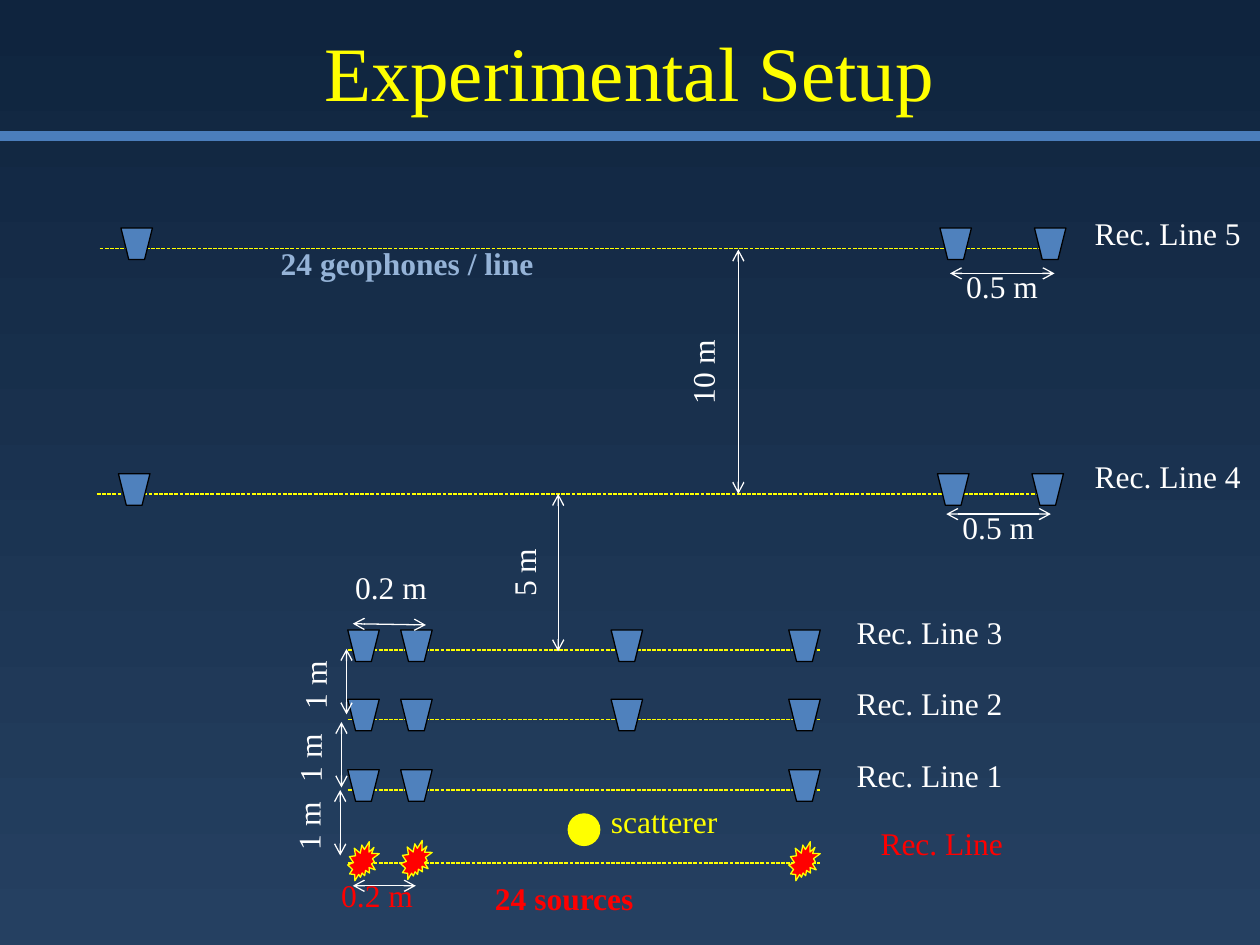
from lxml.etree import SubElement
from pptx import Presentation
from pptx.dml.color import RGBColor
from pptx.enum.dml import MSO_LINE
from pptx.enum.shapes import MSO_CONNECTOR, MSO_SHAPE
from pptx.enum.text import MSO_ANCHOR, MSO_AUTO_SIZE, PP_ALIGN
from pptx.oxml.ns import qn
from pptx.util import Inches, Pt

NAVY = RGBColor(0x0F, 0x24, 0x3E)
STEEL = RGBColor(0x25, 0x40, 0x61)
BAND = RGBColor(0x4B, 0x7E, 0xBC)
BLUE = RGBColor(0x4F, 0x81, 0xBD)
PALE = RGBColor(0x95, 0xB3, 0xD7)
YELLOW = RGBColor(0xFF, 0xFF, 0x00)
WHITE = RGBColor(0xFF, 0xFF, 0xFF)
RED = RGBColor(0xFF, 0x00, 0x00)
BLACK = RGBColor(0x00, 0x00, 0x00)


class Board:
    font = "Times New Roman"
    size = 18
    thin = 0.75
    side = 0.25
    high = 0.4

    def __init__(self, slide):
        self.slide = slide
        self.shapes = slide.shapes

    def ground(self, top, base):
        fill = self.slide.background.fill
        fill.gradient()
        fill.gradient_angle = 270
        for stop, color in zip(fill.gradient_stops, (top, base)):
            stop.color.rgb = color

    def line(self, x1, y1, x2, y2, color, width=thin):
        line = self.shapes.add_connector(
            MSO_CONNECTOR.STRAIGHT, Inches(x1), Inches(y1), Inches(x2), Inches(y2))
        line.line.color.rgb = color
        line.line.width = Pt(width)
        SubElement(line._element.spPr, qn("a:effectLst"))
        return line

    def dash(self, x1, x2, y):
        self.line(x1, y, x2, y, YELLOW).line.dash_style = MSO_LINE.SQUARE_DOT

    def span(self, x1, y1, x2, y2):
        stroke = self.line(x1, y1, x2, y2, WHITE).line._get_or_add_ln()
        for end in ("a:headEnd", "a:tailEnd"):
            SubElement(stroke, qn(end)).set("type", "arrow")

    def paint(self, shape, fill, edge):
        shape.shadow.inherit = False
        shape.fill.solid()
        shape.fill.fore_color.rgb = fill
        shape.line.color.rgb = edge
        shape.line.width = Pt(self.thin)

    def shape(self, kind, x, y, w, h, fill):
        item = self.shapes.add_shape(kind, Inches(x), Inches(y), Inches(w), Inches(h))
        self.paint(item, fill, YELLOW)

    def phone(self, x, y):
        side = self.side
        path = self.shapes.build_freeform(Inches(x), Inches(y))
        path.add_line_segments([
            (Inches(x + side / 4), Inches(y + side)),
            (Inches(x + side * 3 / 4), Inches(y + side)),
            (Inches(x + side), Inches(y))])
        self.paint(path.convert_to_shape(), BLUE, BLACK)

    def row(self, x1, x2, y, spots):
        self.dash(x1, x2, y)
        for x in spots:
            self.phone(x, y - 0.16)

    def text(self, words, x, y, w, color=WHITE, h=high, size=size, bold=False, turn=0):
        box = self.shapes.add_textbox(Inches(x), Inches(y), Inches(w), Inches(h))
        box.rotation = turn
        frame = box.text_frame
        frame.word_wrap = False
        frame.auto_size = MSO_AUTO_SIZE.SHAPE_TO_FIT_TEXT
        run = frame.paragraphs[0].add_run()
        run.text = words
        run.font.name = self.font
        run.font.size = Pt(size)
        run.font.bold = bold
        run.font.color.rgb = color
        return frame

    def title(self, words):
        frame = self.text(words, 0, 0.04, 10, YELLOW, 1.04, 44)
        frame.word_wrap = True
        frame.auto_size = MSO_AUTO_SIZE.NONE
        frame.vertical_anchor = MSO_ANCHOR.MIDDLE
        frame.paragraphs[0].alignment = PP_ALIGN.CENTER


def main():
    deck = Presentation()
    deck.slide_width, deck.slide_height = Inches(10), Inches(7.5)
    board = Board(deck.slides.add_slide(deck.slide_layouts[6]))
    board.ground(NAVY, STEEL)
    board.line(0, 1.08, 10, 1.08, BAND, 5.75)

    board.shape(MSO_SHAPE.OVAL, 4.51, 6.46, 0.25, 0.25, YELLOW)
    board.text("scatterer", 4.75, 6.32, 1.06, YELLOW)

    left, right = 2.76, 6.51
    ends = (2.76, 3.18, 6.26)
    board.dash(left, right, 6.85)
    for x, y in zip(ends, (6.68, 6.67, 6.68)):
        board.shape(MSO_SHAPE.EXPLOSION2, x, y, 0.25, 0.31, RED)

    for y, spots in ((6.27, ends), (5.71, ends + (4.85,)), (5.16, ends + (4.85,))):
        board.row(left, right, y, spots)
    for x, y in ((0.79, 1.97), (0.77, 3.92)):
        board.row(x, x + 7.59, y, [x + step for step in (0.17, 6.67, 7.42)])

    places = ((6.7, 5.95), (6.7, 5.38), (6.7, 4.82), (8.59, 3.58), (8.59, 1.65))
    for count, (x, y) in enumerate(places, 1):
        board.text(f"Rec. Line {count}", x, y, 1.37)

    for x, y in ((7.54, 2.17), (7.51, 4.08)):
        board.span(x, y, x + 0.83, y)
        board.text("0.5 m", x + 0.03, y - 0.1, 0.8)
    board.span(2.8, 4.95, 3.38, 4.96)
    board.text("0.2 m", 2.72, 4.46, 0.8)

    for x, y in ((2.7, 6.27), (2.71, 5.73), (2.75, 5.15)):
        board.span(x, y, x, y + 0.52)
        board.text("1 m", x - 0.55, y + 0.08, 0.59, turn=270)
    board.span(4.43, 3.92, 4.43, 5.17)
    board.text("5 m", 3.86, 4.34, 0.59, turn=270)
    board.span(5.86, 1.98, 5.86, 3.92)
    board.text("10 m", 5.22, 2.75, 0.71, turn=270)

    board.span(2.8, 7.03, 3.3, 7.03)
    board.text("0.2 m", 2.61, 6.9, 0.78, RED)
    board.text("24 geophones / line", 2.13, 1.89, 2.23, PALE, bold=True)
    board.text("24 sources", 3.83, 6.93, 1.31, RED, bold=True)
    board.text("Rec. Line", 6.89, 6.49, 1.18, RED)
    board.title("Experimental Setup")
    deck.save("out.pptx")


if __name__ == "__main__":
    main()
